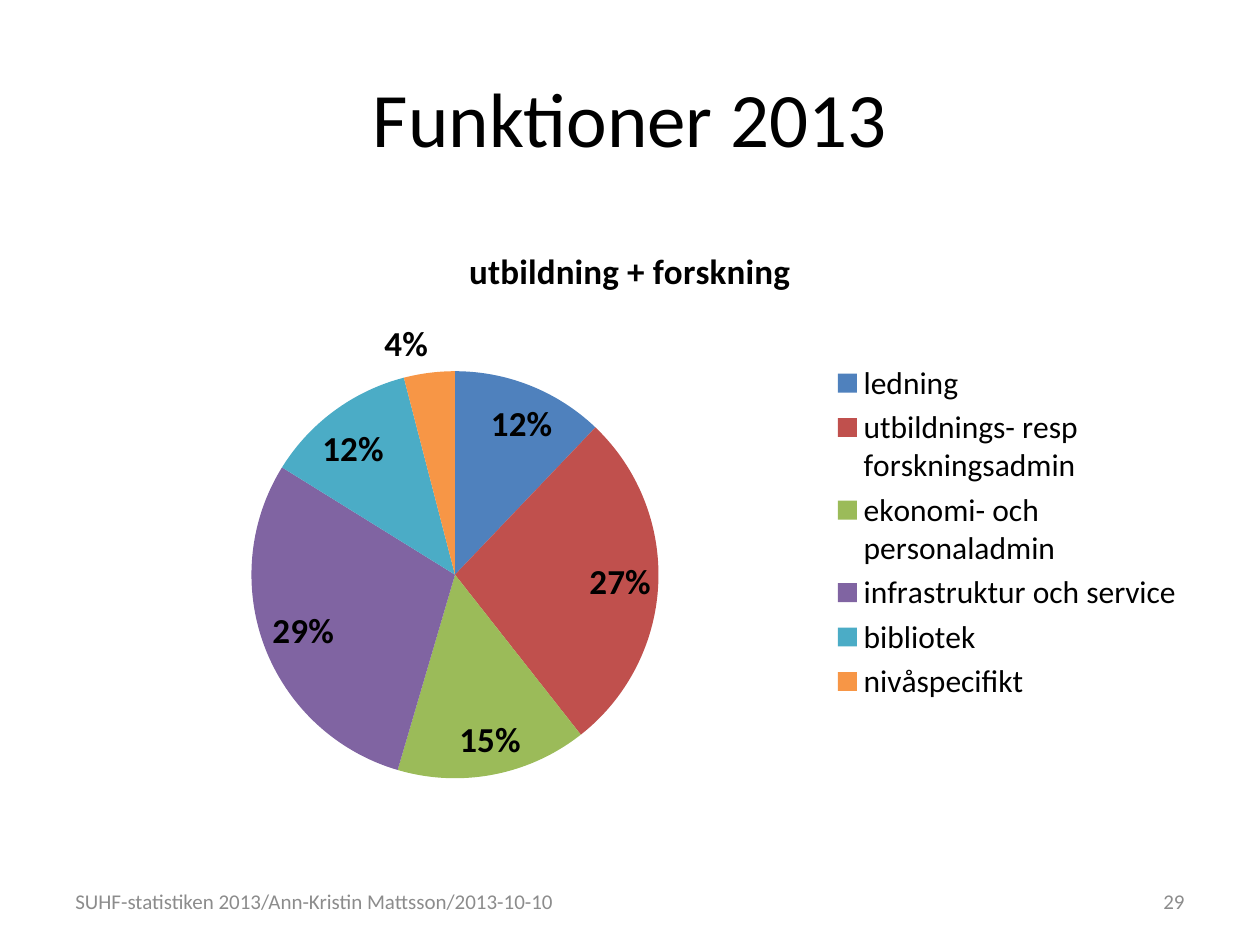
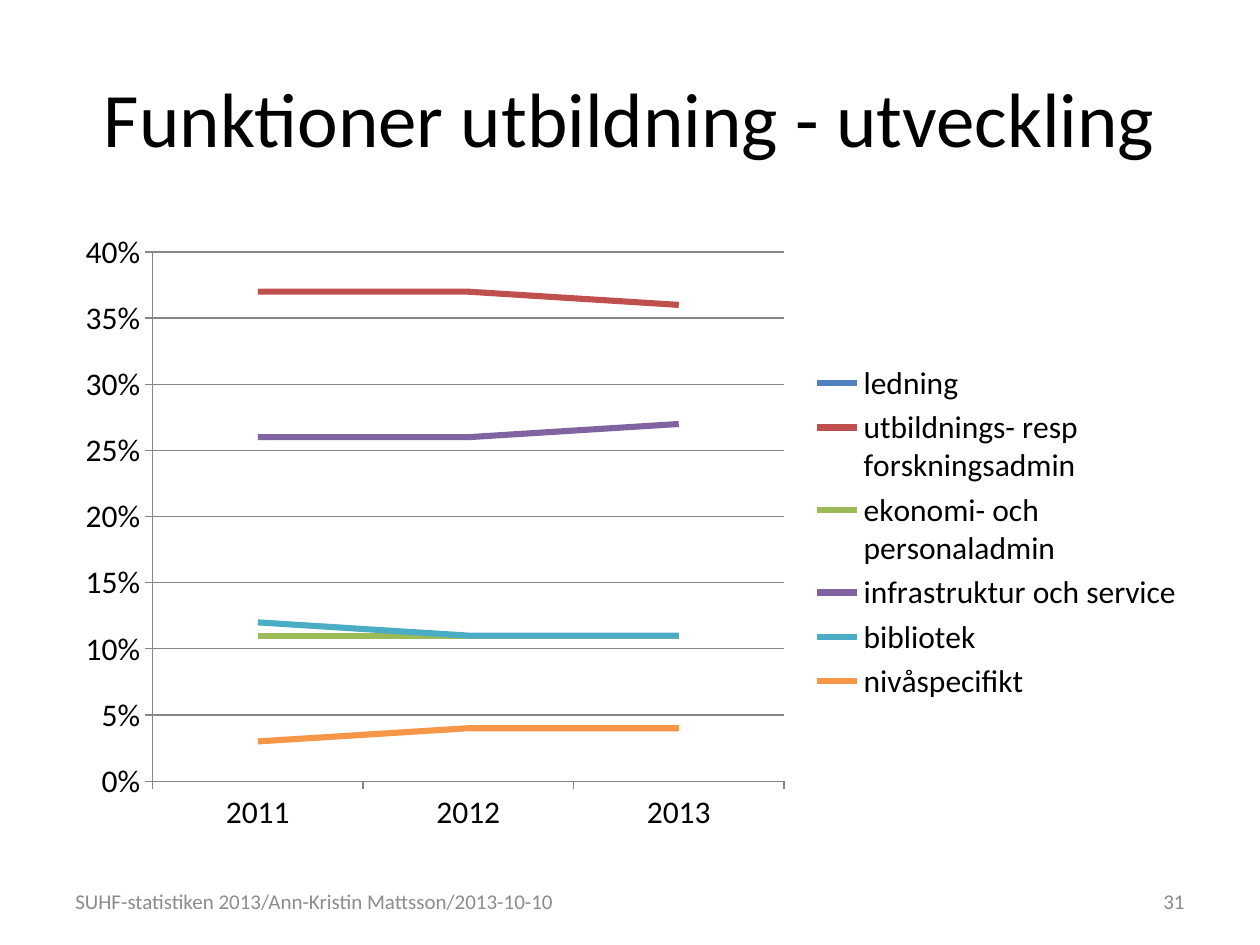
from pptx import Presentation
from pptx import util as u
from pptx.chart.data import CategoryChartData
from pptx.dml.color import RGBColor
from pptx.enum import chart as ch, text

FUNCTIONS = ["ledning", "utbildnings- resp forskningsadmin", "ekonomi- och personaladmin",
             "infrastruktur och service", "bibliotek", "nivåspecifikt"]
COLORS = ["4F81BD", "C0504D", "9BBB59", "8064A2", "4BACC6", "F79646"]
FOOTER = "SUHF-statistiken 2013/Ann-Kristin Mattsson/2013-10-10"
BLACK, GREY, AXIS = "000000", "8C8C8C", "868686"
LEFT, CENTER, RIGHT = text.PP_ALIGN.LEFT, text.PP_ALIGN.CENTER, text.PP_ALIGN.RIGHT


def rgb(value):
    return RGBColor.from_string(value)


class Deck:
    """Style and current slide; lengths are in columns and rows."""
    FONT = "Calibri"
    COL, ROW = u.Inches(0.5), u.Inches(0.05)  # 20 columns, 150 rows

    def __init__(self):
        self.prs = Presentation()
        self.prs.slide_width, self.prs.slide_height = 20 * self.COL, 150 * self.ROW

    def box(self, col, row, cols, rows):
        return [int(n) for n in (col * self.COL, row * self.ROW, cols * self.COL, rows * self.ROW)]

    def style(self, font, size, color=BLACK, bold=False):
        font.name, font.size, font.bold = self.FONT, u.Pt(size), bold
        font.color.rgb = rgb(color)

    def text(self, place, words, size, color, align):
        tf = self.s.shapes.add_textbox(*self.box(*place)).text_frame
        tf.word_wrap = True
        tf.vertical_anchor = text.MSO_ANCHOR.MIDDLE
        p = tf.paragraphs[0]
        p.text, p.alignment = words, align
        self.style(p.font, size, color)

    def slide(self, title, number, footer_cols):
        self.s = self.prs.slides.add_slide(self.prs.slide_layouts[6])
        self.text((1, 6, 18, 25), title, 44, BLACK, CENTER)
        self.text((1, 139, footer_cols, 8), FOOTER, 12, GREY, LEFT)
        self.text((14.34, 139, 4.66, 8), str(number), 12, GREY, RIGHT)

    def chart(self, kind, categories, series, number_format):
        data = CategoryChartData(number_format=number_format)
        data.categories = categories
        for name, values in series:
            data.add_series(name, values)
        chart = self.s.shapes.add_chart(kind, *self.box(1, 35, 18, 99), data).chart
        self.style(chart.font, 10)
        chart.has_title = False
        chart.has_legend = True
        chart.legend.position = ch.XL_LEGEND_POSITION.RIGHT
        chart.legend.include_in_layout = False
        self.style(chart.legend.font, 18)
        return chart

    def pie(self, title, values):
        chart = self.chart(ch.XL_CHART_TYPE.PIE, FUNCTIONS, [(title, values)], "General")
        chart.has_title = True
        p = chart.chart_title.text_frame.paragraphs[0]
        p.text = title
        self.style(p.font, 20, bold=True)
        plot = chart.plots[0]
        plot.vary_by_categories = True
        for i, color in enumerate(COLORS):
            fill = plot.series[0].points[i].format.fill
            fill.solid()
            fill.fore_color.rgb = rgb(color)
        # Percentage labels
        plot.has_data_labels = True
        labels = plot.data_labels
        labels.show_percentage, labels.show_value = True, False
        labels.number_format, labels.number_format_is_linked = "0%", False
        labels.position = ch.XL_LABEL_POSITION.BEST_FIT
        self.style(labels.font, 20, bold=True)

    def lines(self, years, rows):
        chart = self.chart(ch.XL_CHART_TYPE.LINE, years, zip(FUNCTIONS, rows), "0%")
        chart.plots[0].vary_by_categories = False
        for series, color in zip(chart.plots[0].series, COLORS):
            series.smooth = False
            series.format.line.width = u.Pt(3.5)
            series.format.line.color.rgb = rgb(color)
        # Axes and gridlines
        value_axis = chart.value_axis
        value_axis.minimum_scale, value_axis.maximum_scale, value_axis.major_unit = 0, 0.4, 0.05
        value_axis.has_major_gridlines = True
        value_axis.tick_labels.number_format = "0%"
        value_axis.tick_labels.number_format_is_linked = False
        for axis in (chart.category_axis, value_axis):
            axis.major_tick_mark = ch.XL_TICK_MARK.OUTSIDE
            self.style(axis.tick_labels.font, 18)
        for part in (chart.category_axis, value_axis, value_axis.major_gridlines):
            part.format.line.width = u.Pt(0.75)
            part.format.line.color.rgb = rgb(AXIS)


def main():
    deck = Deck()

    # Share of each function
    deck.slide("Funktioner 2013", 29, 9.48)
    deck.pie("utbildning + forskning", [12, 27, 15, 29, 12, 4])

    # Development over three years
    deck.slide("Funktioner utbildning - utveckling", 31, 8.52)
    deck.lines(["2011", "2012", "2013"], [
        (0.11, 0.11, 0.11),
        (0.37, 0.37, 0.36),
        (0.11, 0.11, 0.11),
        (0.26, 0.26, 0.27),
        (0.12, 0.11, 0.11),
        (0.03, 0.04, 0.04),
    ])

    deck.prs.save("out.pptx")


if __name__ == "__main__":
    main()
